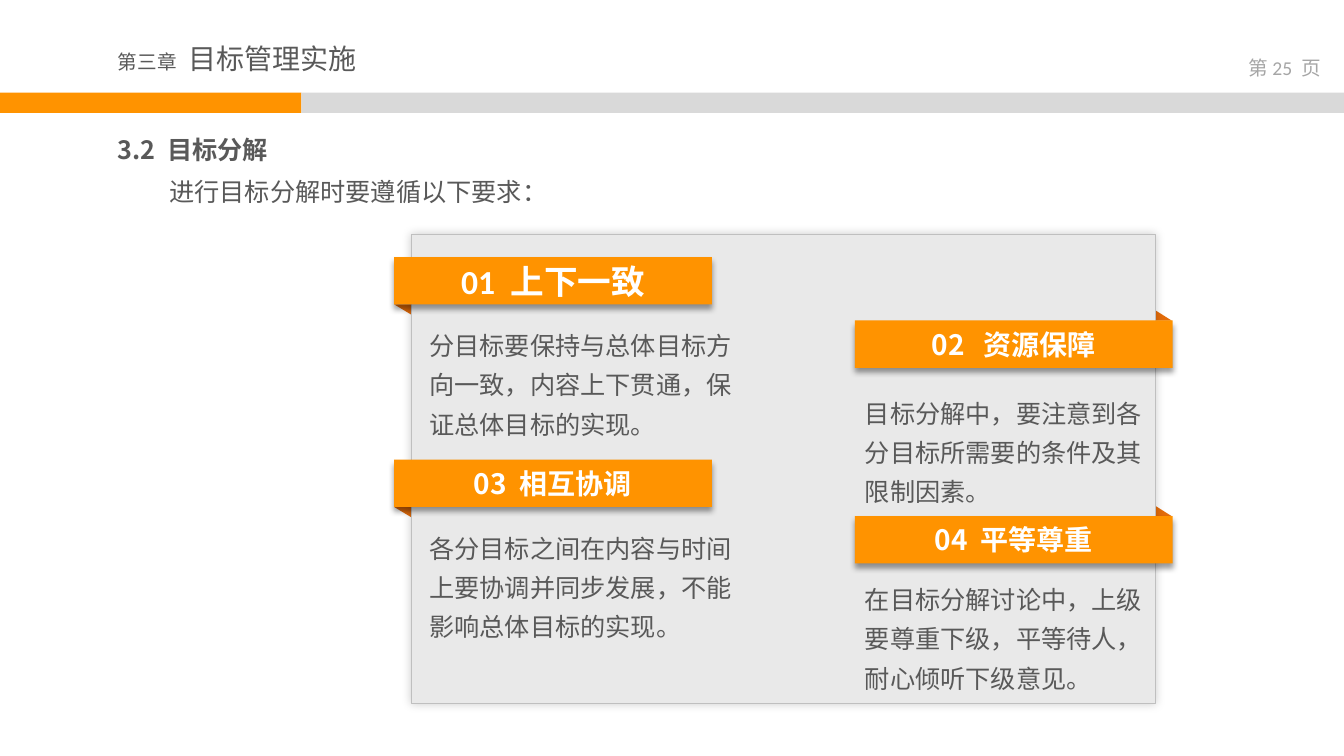
from pptx import Presentation
from pptx.dml.color import RGBColor
from pptx.enum.shapes import MSO_SHAPE
from pptx.enum.text import MSO_ANCHOR, MSO_AUTO_SIZE, PP_ALIGN
from pptx.util import Inches, Pt
from lxml import etree

RECT, FOLD = MSO_SHAPE.RECTANGLE, MSO_SHAPE.RIGHT_TRIANGLE
TOP, MID = MSO_ANCHOR.TOP, MSO_ANCHOR.MIDDLE
LEFT, MIDDLE = PP_ALIGN.LEFT, PP_ALIGN.CENTER
FIXED = MSO_AUTO_SIZE.NONE
NS = "http://schemas.openxmlformats.org/drawingml/2006/main"
HAN, LATIN = "Noto Sans CJK SC", "Calibri"
ORANGE, RUST, GREY = "FF9300", "E46C0A", "595959"

prs = Presentation()
prs.slide_width, prs.slide_height = Inches(13.33), Inches(7.5)
slide = prs.slides.add_slide(prs.slide_layouts[5])
shapes = slide.shapes
color = RGBColor.from_string


def block(kind, box, fill, shade=None):
    """Draw a filled shape; shade is (alpha %, blur, distance, angle)."""
    shape = shapes.add_shape(kind, *map(Inches, box))
    shape.fill.solid()
    shape.fill.fore_color.rgb = color(fill)
    shape.line.fill.background()
    shape.shadow.inherit = False
    if shade:
        alpha, blur, dist, angle = shade
        effects = shape._element.spPr.find(f"{{{NS}}}effectLst")
        outer = etree.SubElement(
            effects, f"{{{NS}}}outerShdw", blurRad=str(Pt(blur)),
            dist=str(Pt(dist)), dir=str(angle * 60000), rotWithShape="0")
        black = etree.SubElement(outer, f"{{{NS}}}srgbClr", val="000000")
        etree.SubElement(black, f"{{{NS}}}alpha", val=str(alpha * 1000))
    return shape


def write(shape, runs, ink, bold=False, align=LEFT, anchor=TOP, space=1.0):
    """Fill a shape with one paragraph of (text, size, font) runs."""
    frame = shape.text_frame
    look = {"word_wrap": True, "auto_size": FIXED, "vertical_anchor": anchor}
    for name, value in look.items():
        setattr(frame, name, value)
    para = frame.paragraphs[0]
    para.alignment, para.line_spacing = align, space
    for text, size, face in runs:
        run = para.add_run()
        run.text = text
        style = {"name": face, "size": Pt(size), "bold": bold}
        for name, value in style.items():
            setattr(run.font, name, value)
        run.font.color.rgb = color(ink)
        latin = run._r.rPr.find(f"{{{NS}}}latin")
        latin.addnext(etree.Element(f"{{{NS}}}ea", typeface=HAN))


# Header band
block(RECT, (0, 0.92, 2.99, 0.2), ORANGE)
block(RECT, (2.99, 0.92, 10.34, 0.2), "D9D9D9")

# Chapter title
title = shapes.title
spot = {"left": 1.07, "top": 0.36, "width": 5.43, "height": 0.44}
for name, value in spot.items():
    setattr(title, name, Inches(value))
write(title, [("第三章", 14, HAN), (" ", 16, HAN), (" 目标管理实施", 20, HAN)],
      GREY, anchor=MID)

# Page number, section heading and lead-in
page = [("第 ", 14, HAN), ("25  ", 14, LATIN), ("页", 14, HAN)]
labels = [
    ((12.14, 0.51, 1.2, 0.4), page, "A6A6A6", False, MIDDLE, TOP),
    ((1.07, 1.28, 3.01, 0.4), [("3.2  目标分解", 18, HAN)],
     GREY, True, LEFT, MID),
    ((1.58, 1.7, 4.22, 0.4), [("进行目标分解时要遵循以下要求：", 18, HAN)],
     GREY, False, LEFT, TOP),
]
for box, *rest in labels:
    write(shapes.add_textbox(*map(Inches, box)), *rest)

# Requirements: side, banner top, text top, heading, size, font, text
items = [
    ("left", 2.55, 3.14, "01  上下一致", 24, LATIN,
     "分目标要保持与总体目标方向一致，内容上下贯通，保证总体目标的实现。"),
    ("right", 3.18, 3.81, "02   资源保障", 20, HAN,
     "目标分解中，要注意到各分目标所需要的条件及其限制因素。"),
    ("left", 4.56, 5.15, "03  相互协调", 20, HAN,
     "各分目标之间在内容与时间上要协调并同步发展，不能影响总体目标的实现。"),
    ("right", 5.12, 5.66, "04  平等尊重", 20, HAN,
     "在目标分解讨论中，上级要尊重下级，平等待人，耐心倾听下级意见。"),
]
# Banner left, text left, text width
sides = {"left": (3.91, 4.16, 3.22), "right": (8.48, 8.48, 2.98)}
WIDE, HIGH, DEEP = 3.15, 0.47, 0.12

# Ribbon folds behind the panel
for side, top, *rest in items:
    if side == "left":
        fold = block(FOLD, (3.91, top + HIGH, 0.2, DEEP), RUST)
        fold.rotation = 180
    else:
        block(FOLD, (11.43, top - DEEP, 0.19, DEEP), RUST)

# Panel
panel = block(RECT, (4.08, 2.33, 7.38, 4.65), "E9E9E9", (20, 6, 0, 315))
panel.line.color.rgb = color("BFBFBF")
panel.line.width = Pt(0.75)

# Banners and their texts
for side, top, low, head, size, face, text in items:
    left, inner, width = sides[side]
    banner = block(RECT, (left, top, WIDE, HIGH), ORANGE, (40, 4, 3, 90))
    write(banner, [(head, size, face)], "FFFFFF", True, MIDDLE, MID)
    body = shapes.add_textbox(*map(Inches, (inner, low, width, 1.27)))
    write(body, [(text, 18, HAN)], GREY, space=1.3)

prs.save("out.pptx")
